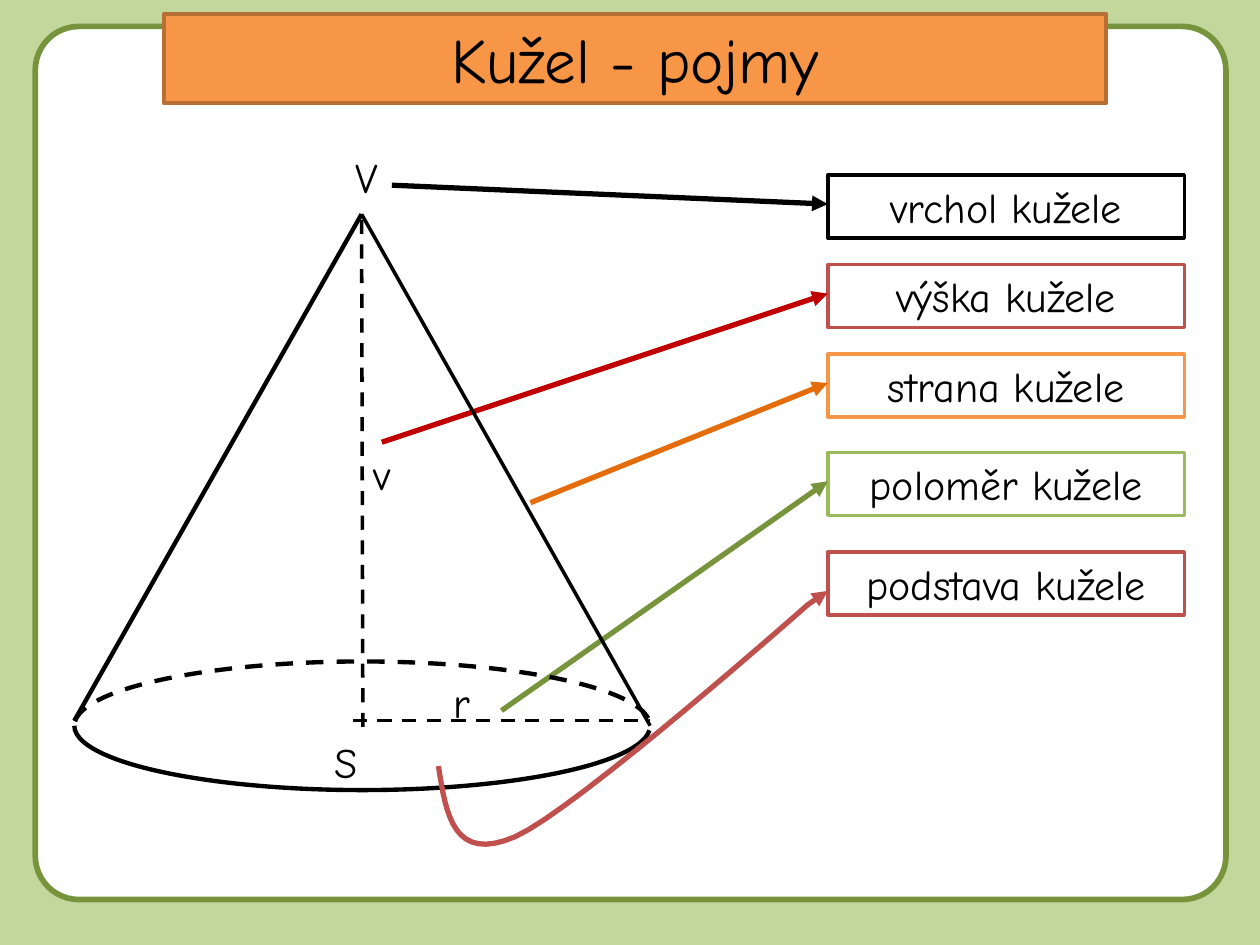
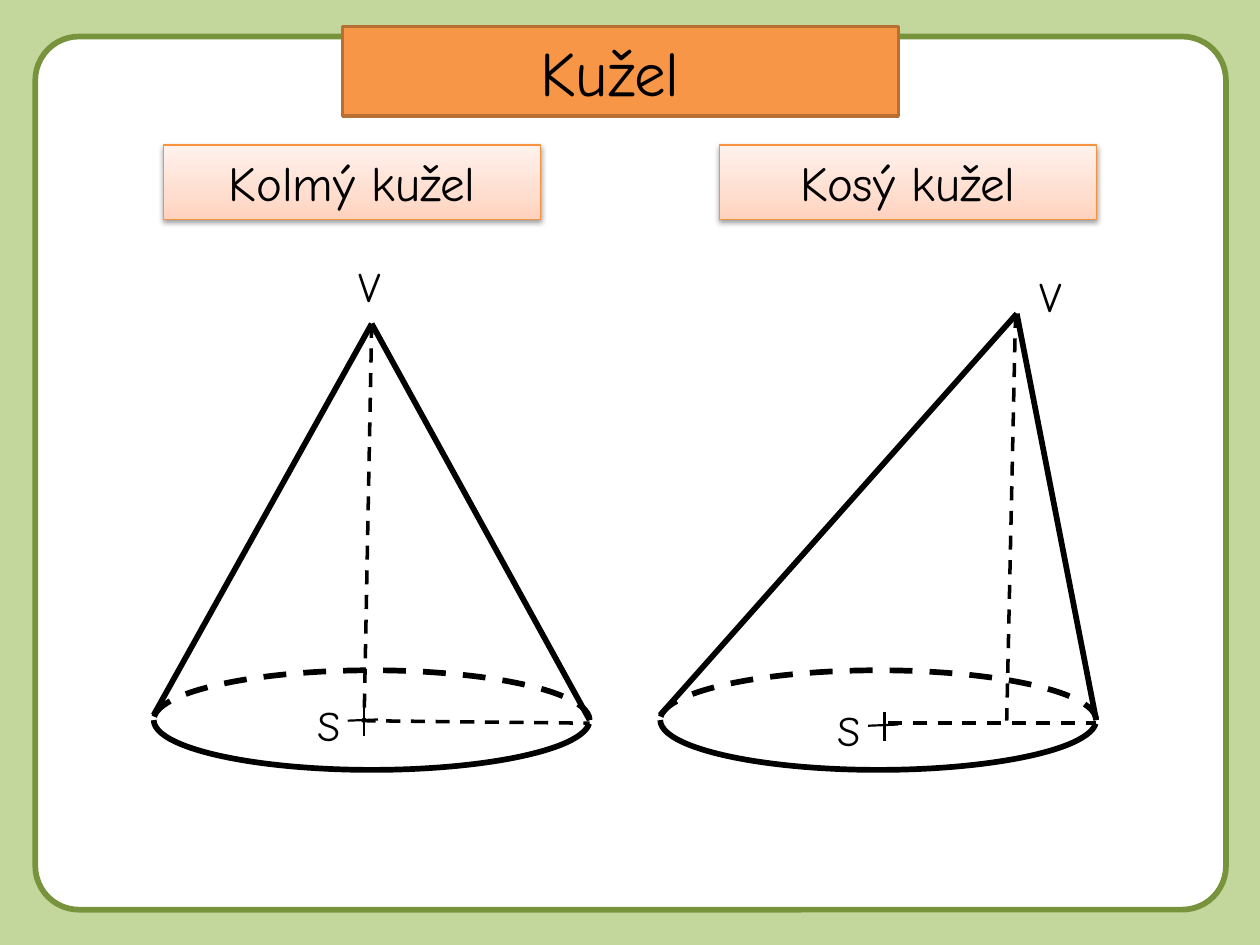
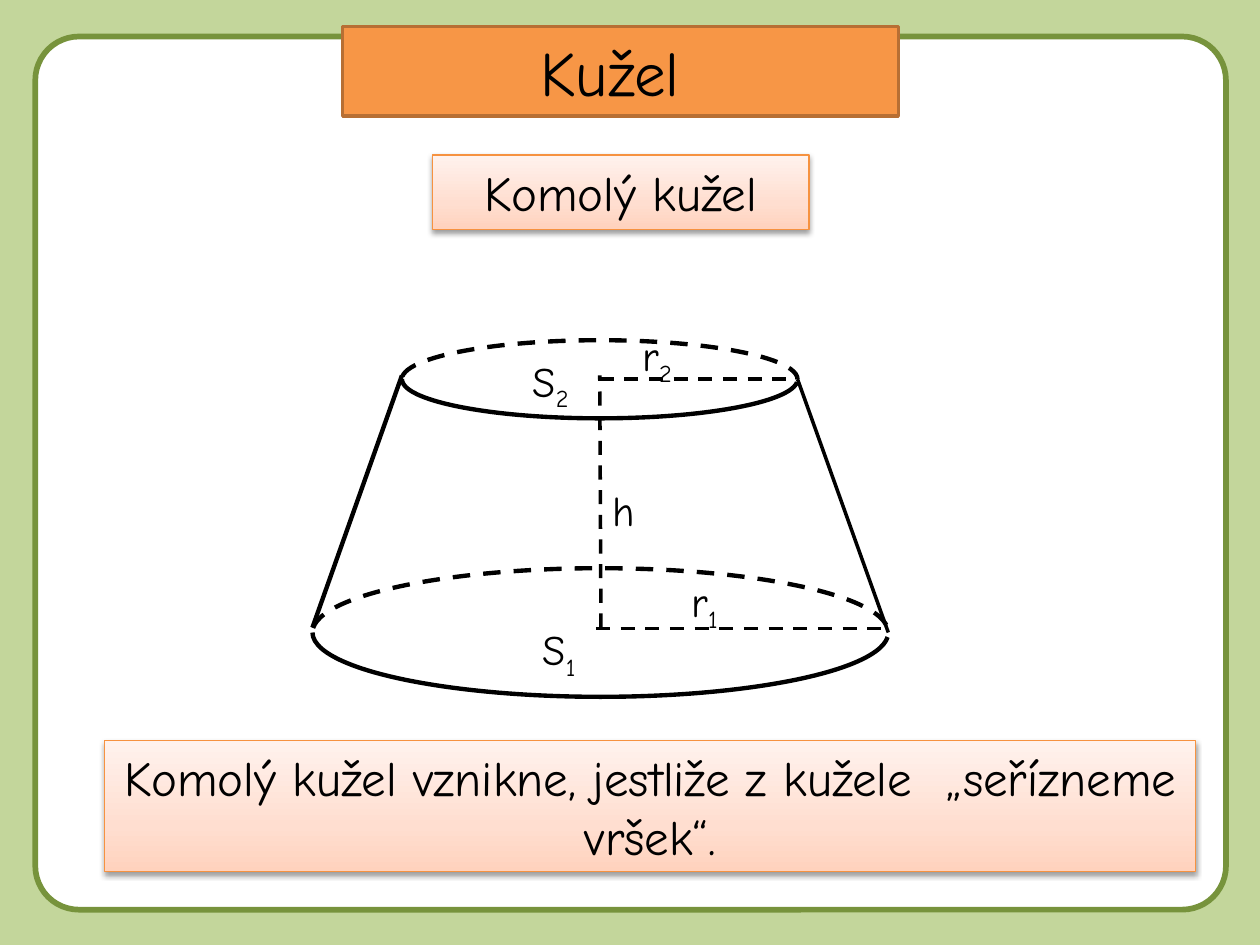
from copy import deepcopy
from typing import NamedTuple

from lxml.etree import SubElement
from pptx import Presentation
from pptx.dml.color import RGBColor
from pptx.enum.dml import MSO_LINE
from pptx.enum.shapes import MSO_CONNECTOR, MSO_SHAPE
from pptx.enum.text import MSO_ANCHOR, MSO_AUTO_SIZE, PP_ALIGN
from pptx.oxml.ns import qn
from pptx.util import Inches, Pt

DASH = MSO_LINE.DASH
STRAIGHT = MSO_CONNECTOR.STRAIGHT
ARC, RECT, ROUND = MSO_SHAPE.ARC, MSO_SHAPE.RECTANGLE, MSO_SHAPE.ROUNDED_RECTANGLE
MIDDLE, TOP = MSO_ANCHOR.MIDDLE, MSO_ANCHOR.TOP
GROW, FIXED = MSO_AUTO_SIZE.SHAPE_TO_FIT_TEXT, MSO_AUTO_SIZE.NONE
LEFT, CENTER = PP_ALIGN.LEFT, PP_ALIGN.CENTER

BLACK = RGBColor(0x00, 0x00, 0x00)
WHITE = RGBColor(0xFF, 0xFF, 0xFF)
LIME = RGBColor(0xC3, 0xD6, 0x9B)
OLIVE = RGBColor(0x77, 0x93, 0x3C)
GREEN = RGBColor(0x9B, 0xBB, 0x59)
ORANGE = RGBColor(0xF7, 0x96, 0x46)
AMBER = RGBColor(0xF6, 0x92, 0x40)
RUST = RGBColor(0xB7, 0x6F, 0x34)
BURNT = RGBColor(0xE4, 0x6C, 0x0A)
BRICK = RGBColor(0xC0, 0x50, 0x4D)
RED = RGBColor(0xC0, 0x00, 0x00)
PEACH = ((0, RGBColor(0xFF, 0xD2, 0xBD)), (0.35, RGBColor(0xFF, 0xDE, 0xD0)),
         (1, RGBColor(0xFF, 0xF2, 0xED)))

FONT = "Comic Neue"
WIDE, HIGH = Inches(10), Inches(7.5)
COL, ROW = WIDE / 100, HIGH / 75
SHADE = {"blurRad": str(Pt(3.1)), "dist": str(Pt(1.6)), "dir": "5400000",
         "algn": "ctr", "rotWithShape": "0"}

Point = tuple[float, float]


class Box(NamedTuple):
    x: float
    y: float
    w: float
    h: float


class Pen(NamedTuple):
    width: float
    color: RGBColor = BLACK
    dash: bool = False


class Line(NamedTuple):
    start: Point
    end: Point
    pen: Pen


class Mark(NamedTuple):
    text: str
    x: float
    y: float
    sub: str = ""


class Term(NamedTuple):
    text: str
    top: float
    frame: RGBColor
    start: Point | None = None
    arrow: RGBColor = BLACK


THIN, MID, BOLD, THICK = Pen(1.25), Pen(2), Pen(2.5), Pen(3.25)
DASHED = Pen(2, dash=True)
TERM_X, TERM_W, TERM_H = 65.7, 28.3, 5
TERMS = (
    Term("vrchol kužele", 13.9, BLACK, (31.1, 14.7), BLACK),
    Term("výška kužele", 21, BRICK, (30.3, 35.1), RED),
    Term("strana kužele", 28.1, ORANGE, (42.1, 39.9), BURNT),
    Term("poloměr kužele", 35.9, GREEN, (39.8, 56.4), OLIVE),
    Term("podstava kužele", 43.8, BRICK),
)
BENDS = (
    ((34.8, 60.8), (35.4, 64.7), (36, 68.5), (40.9, 66.4)),
    ((40.9, 66.4), (45.8, 64.2), (64.1, 48), (64.1, 48)),
)
STEPS = 16


def place(x: float, y: float) -> tuple[int, int]:
    return round(x * COL), round(y * ROW)


def apply(target, values: dict) -> None:
    for name, value in values.items():
        setattr(target, name, value)


def trace(shape, pen: Pen) -> None:
    shape.line.color.rgb = pen.color
    shape.line.width = Pt(pen.width)
    if pen.dash:
        shape.line.dash_style = DASH


def point(shape) -> None:
    SubElement(shape.element.xpath(".//a:ln")[0], qn("a:tailEnd"), type="triangle")


def write(shape, text: str, size: float, align=CENTER, anchor=MIDDLE,
          fit=GROW, sub: str = "") -> None:
    frame = shape.text_frame
    apply(frame, {"word_wrap": True, "auto_size": fit, "vertical_anchor": anchor})
    para = frame.paragraphs[0]
    para.alignment = align
    for part in filter(None, (text, sub)):
        run = para.add_run()
        run.text = part
        apply(run.font, {"name": FONT, "size": Pt(size)})
        run.font.color.rgb = BLACK
    if sub:
        run.font._element.set("baseline", "-25000")


def draw(slide, kind, box: Box, pen: Pen, fill: RGBColor | None = None):
    shape = slide.shapes.add_shape(kind, *place(box.x, box.y), *place(box.w, box.h))
    shape.shadow.inherit = False
    if fill is None:
        shape.fill.background()
    else:
        shape.fill.solid()
        shape.fill.fore_color.rgb = fill
    trace(shape, pen)
    return shape


def link(slide, line: Line):
    shape = slide.shapes.add_connector(STRAIGHT, *place(*line.start), *place(*line.end))
    trace(shape, line.pen)
    SubElement(shape.element.spPr, qn("a:effectLst"))
    return shape


def note(slide, mark: Mark) -> None:
    shape = slide.shapes.add_textbox(*place(mark.x, mark.y), *place(6.3, 5))
    write(shape, mark.text, 24, LEFT, TOP, sub=mark.sub)


def banner(slide, text: str, box: Box) -> None:
    shape = draw(slide, RECT, box, Pen(0.75, AMBER))
    fill = shape.fill
    fill.gradient()
    fill.gradient_angle = 90
    stops = shape.element.xpath(".//a:gsLst")[0]
    stops.append(deepcopy(stops[0]))
    for stop, (share, color) in zip(fill.gradient_stops, PEACH):
        stop.position = share
        stop.color.rgb = color
    glow = shape.element.xpath("./p:spPr/a:effectLst")[0]
    outer = SubElement(glow, qn("a:outerShdw"), SHADE)
    tint = SubElement(outer, qn("a:srgbClr"), val=str(BLACK))
    SubElement(tint, qn("a:alpha"), val="38000")
    write(shape, text, 28)


def ring(slide, box: Box, pen: Pen) -> None:
    for angle, dash in ((0, True), (180, False)):
        arc = draw(slide, ARC, box, pen._replace(dash=dash))
        arc.rotation = angle
        arc.adjustments[0] = 108.54
        arc.adjustments[1] = 0


def solid(slide, base: Box, tops: tuple[Point, Point], left: Pen, right: Pen) -> None:
    ring(slide, base, left)
    level = base.y + base.h / 2
    link(slide, Line((base.x + base.w, level), tops[1], right))
    link(slide, Line((base.x, level - 0.4), tops[0], left))


def cross(slide, x: float, y: float) -> None:
    link(slide, Line((x, y - 1.1), (x, y + 1.2), THIN))
    link(slide, Line((x - 1.3, y), (x + 1.1, y - 0.1), THIN))


def bend(a: Point, b: Point, c: Point, d: Point) -> list[Point]:
    dots = []
    for step in range(STEPS + 1):
        t = step / STEPS
        u = 1 - t
        mix = (u ** 3, 3 * u * u * t, 3 * u * t * t, t ** 3)
        dots.append(tuple(sum(m * p[axis] for m, p in zip(mix, (a, b, c, d)))
                          for axis in (0, 1)))
    return dots


def sweep(slide, end: Point, pen: Pen) -> None:
    dots = [place(*dot) for dot in bend(*BENDS[0]) + bend(*BENDS[1])[1:] + [end]]
    path = slide.shapes.build_freeform(*dots[0])
    path.add_line_segments(dots[1:], close=False)
    shape = path.convert_to_shape()
    shape.shadow.inherit = False
    shape.fill.background()
    trace(shape, pen)
    point(shape)


def start(deck, text: str, top: float, box: Box):
    slide = deck.slides.add_slide(deck.slide_layouts[5])
    panel = draw(slide, ROUND, Box(2.8, top, 94.5, 69.3), Pen(3.25, OLIVE), WHITE)
    panel.adjustments[0] = 0.05
    title = slide.shapes.title
    title.element.addprevious(panel.element)
    (x, y), (w, h) = place(box.x, box.y), place(box.w, box.h)
    apply(title, {"left": x, "top": y, "width": w, "height": h})
    title.fill.solid()
    title.fill.fore_color.rgb = ORANGE
    trace(title, Pen(2, RUST))
    write(title, text, 36, fit=FIXED)
    return slide


def terms(deck) -> None:
    slide = start(deck, "Kužel - pojmy", 2.1, Box(13, 1.1, 74.8, 7.1))
    for term in TERMS:
        box = Box(TERM_X, term.top, TERM_W, TERM_H)
        write(draw(slide, RECT, box, Pen(2, term.frame), WHITE), term.text, 24)
        if term.start:
            end = (TERM_X, term.top + 2.3)
            point(link(slide, Line(term.start, end, Pen(3, term.arrow))))
    peak = (28.7, 17)
    solid(slide, Box(5.9, 52.5, 45.7, 10.2), (peak, peak), BOLD, MID)
    link(slide, Line((28, 57.2), (51.6, 57.2), DASHED))
    link(slide, Line((28.8, 57.7), peak, DASHED))
    for mark in (Mark("V", 27.2, 11.5), Mark("r", 35, 53.2),
                 Mark("v", 28.7, 35.1), Mark("S", 25.6, 58)):
        note(slide, mark)
    sweep(slide, (TERM_X, TERMS[-1].top + 3.1), Pen(3, BRICK))


HEAD = Box(27.2, 2.1, 44.1, 7.1)


def kinds(deck) -> None:
    slide = start(deck, "Kužel ", 2.9, HEAD)
    for text, x in (("Kolmý kužel", 13), ("Kosý kužel", 57.1)):
        banner(slide, text, Box(x, 11.5, 29.9, 5.9))
    for x, peak in ((12.2, (29.5, 25.7)), (52.4, (80.7, 24.9))):
        solid(slide, Box(x, 53.2, 34.6, 7.9), (peak, peak), THICK, THICK)
    cross(slide, 28.9, 57.2)
    cross(slide, 70.2, 57.6)
    for line in (Line((29.5, 25.7), (28.9, 57.2), DASHED),
                 Line((28.7, 57.2), (46.8, 57.4), DASHED),
                 Line((80.6, 24.9), (79.9, 57.2), DASHED),
                 Line((70.5, 57.4), (87, 57.4), DASHED)):
        link(slide, line)
    for mark in (Mark("V", 27.5, 20.2), Mark("S", 24.2, 55),
                 Mark("V", 81.5, 21), Mark("S", 65.5, 55.4)):
        note(slide, mark)


def stump(deck) -> None:
    slide = start(deck, "Kužel ", 2.9, HEAD)
    tops = ((31.9, 29.8), (63.3, 30.1))
    solid(slide, Box(24.8, 45.1, 45.7, 10.2), tops, BOLD, MID)
    ring(slide, Box(31.9, 27, 31.4, 6.2), BOLD)
    for line in (Line((47.3, 49.9), (70.2, 49.9), DASHED),
                 Line((47.7, 49.8), (47.6, 29.8), DASHED),
                 Line((47.6, 30.1), (63.3, 30.1), DASHED)):
        link(slide, line)
    for mark in (Mark("r", 53.9, 45.2, "1"), Mark("h", 47.6, 38),
                 Mark("S", 41.3, 27.7, "2"), Mark("S", 42.1, 49, "1"),
                 Mark("r", 50, 25.7, "2")):
        note(slide, mark)
    banner(slide, "Komolý kužel", Box(34.3, 12.3, 29.9, 5.9))
    banner(slide, "Komolý kužel vznikne, jestliže z kužele  „seřízneme vršek“.",
           Box(8.3, 58.8, 86.6, 10.4))


def main() -> None:
    deck = Presentation()
    apply(deck, {"slide_width": WIDE, "slide_height": HIGH})
    back = deck.slide_master.background.fill
    back.solid()
    back.fore_color.rgb = LIME
    for build in (terms, kinds, stump):
        build(deck)
    deck.save("out.pptx")


if __name__ == "__main__":
    main()
